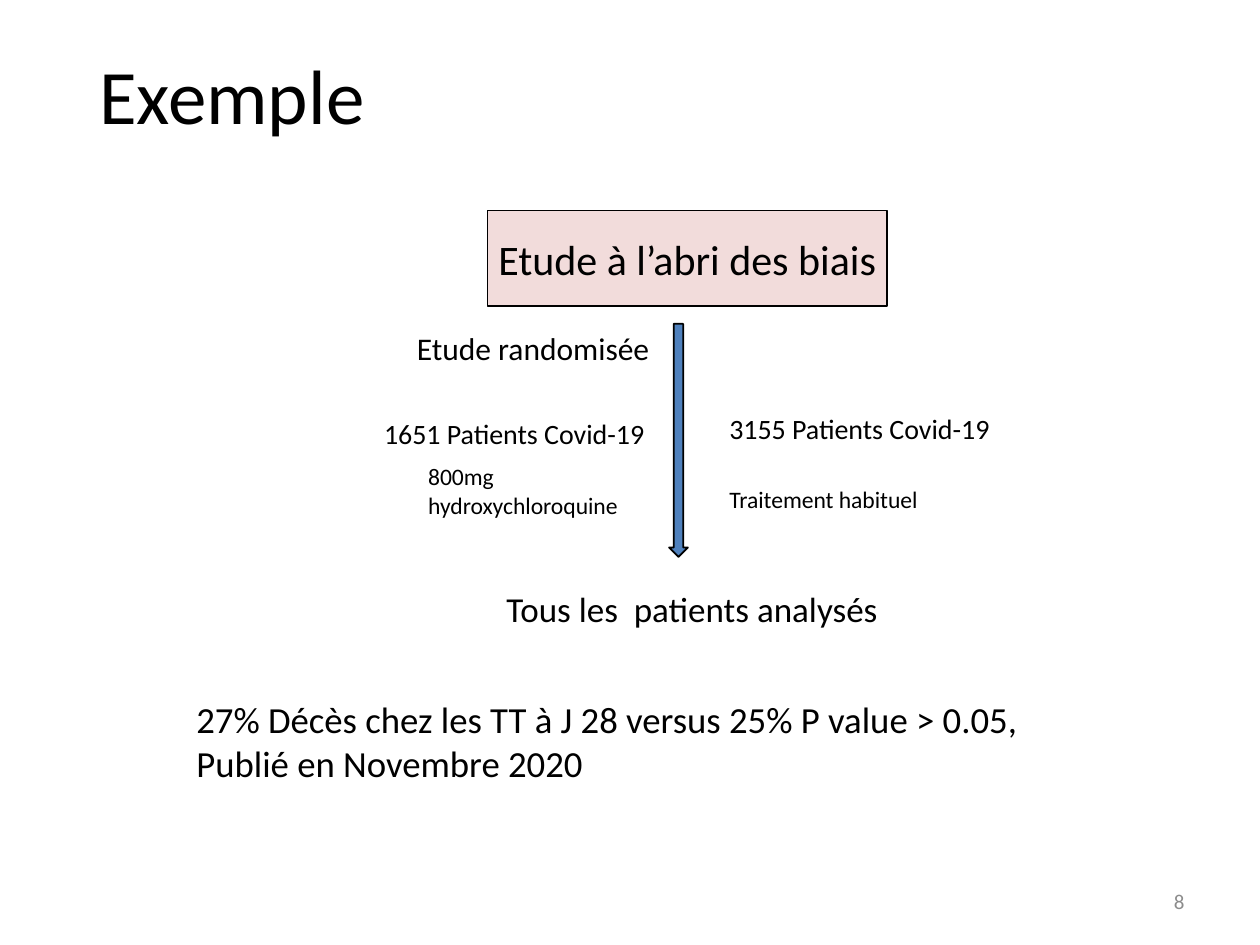
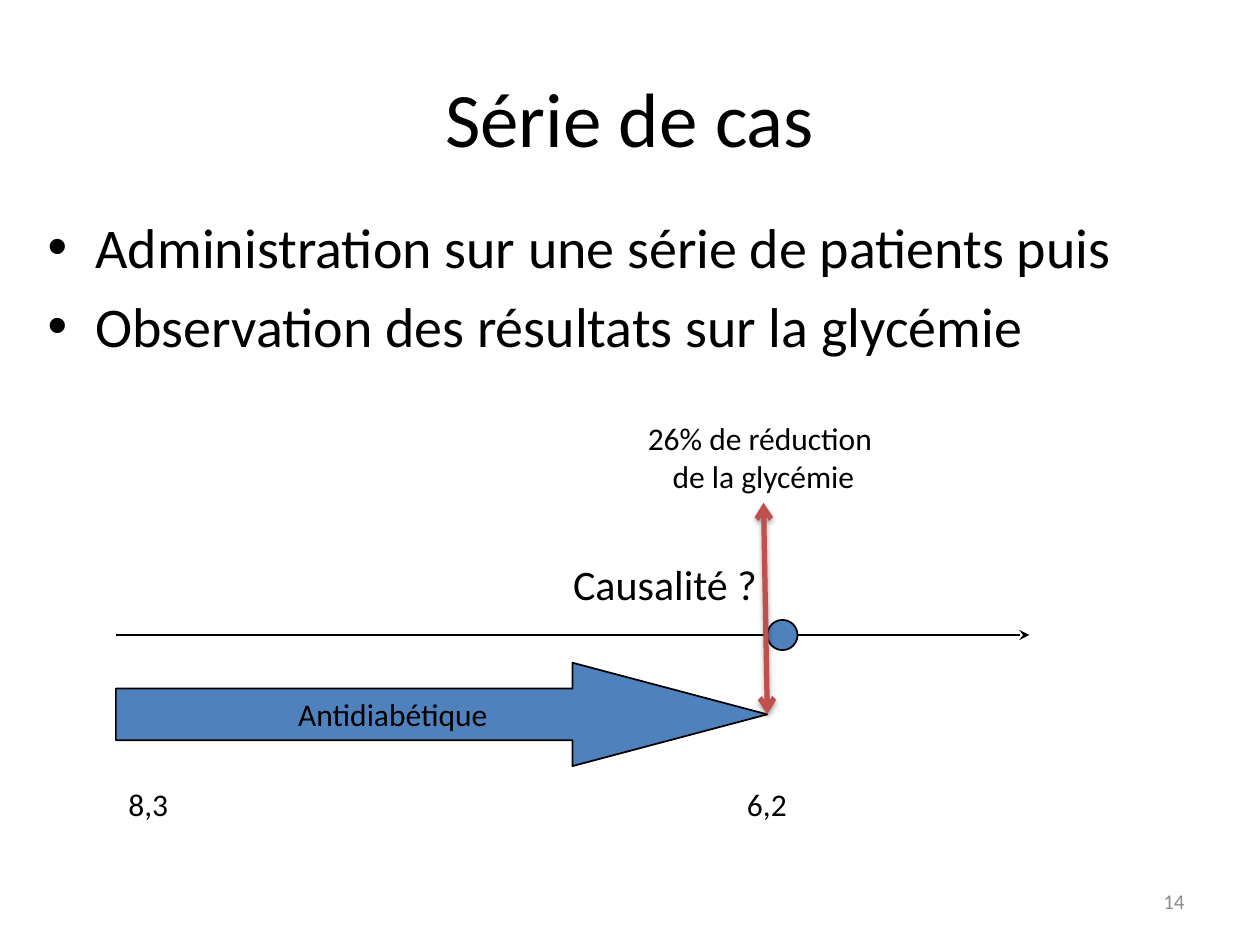
import pptx
import pptx.dml.color
import pptx.enum.shapes
import pptx.enum.text
import pptx.oxml
import pptx.oxml.ns
import pptx.util

Inches = pptx.util.Inches
Pt = pptx.util.Pt
Shape = pptx.enum.shapes.MSO_SHAPE
Align = pptx.enum.text.PP_ALIGN
Anchor = pptx.enum.text.MSO_ANCHOR

FONT = "Calibri"
BLACK = "000000"
GREY = "8C8C8C"
BLUE = "4F81BD"
PINK = "F2DCDB"
RED = "C0504D"
TITLE_SIZE = 44
BULLET_INDENT = 0.38


def color(hex_string):
    return pptx.dml.color.RGBColor.from_string(hex_string)


def append_xml(parent, xml):
    namespace = pptx.oxml.ns.nsdecls("a")
    element = pptx.oxml.parse_xml(f"<a:root {namespace}>{xml}</a:root>")
    for child in list(element):
        parent.append(child)


def write(shape, lines, size, align=Align.LEFT, anchor=Anchor.TOP, wrap=True, ink=BLACK):
    frame = shape.text_frame
    frame.word_wrap = wrap
    frame.vertical_anchor = anchor
    for index, line in enumerate(lines):
        paragraph = frame.paragraphs[0] if index == 0 else frame.add_paragraph()
        paragraph.text = line
        paragraph.alignment = align
        paragraph.font.name = FONT
        paragraph.font.size = Pt(size)
        paragraph.font.color.rgb = color(ink)
    return frame


def add_text(slide, box, lines, size, **style):
    shape = slide.shapes.add_textbox(*map(Inches, box))
    return write(shape, lines, size, **style)


def add_label(slide, box, *lines, size=18):
    add_text(slide, box, lines, size, wrap=False)


def add_title(slide, box, text, align=Align.LEFT):
    add_text(slide, box, [text], TITLE_SIZE, align=align, anchor=Anchor.MIDDLE)


def add_page_number(slide, number):
    add_text(slide, (7.17, 6.95, 2.33, 0.4), [str(number)], 12,
             align=Align.RIGHT, anchor=Anchor.MIDDLE, ink=GREY)


def add_bullets(slide, box, lines, size):
    frame = add_text(slide, box, lines, size)
    indent = Inches(BULLET_INDENT)
    for paragraph in frame.paragraphs:
        paragraph.space_before = Pt(size * 0.2)
        properties = paragraph._p.get_or_add_pPr()
        properties.set("marL", str(indent))
        properties.set("indent", str(-indent))
        append_xml(properties, '<a:buFont typeface="Arial"/><a:buChar char="•"/>')


def add_block(slide, kind, box, fill, text=None, size=18):
    shape = slide.shapes.add_shape(kind, *map(Inches, box))
    shape.shadow.inherit = False
    shape.fill.solid()
    shape.fill.fore_color.rgb = color(fill)
    shape.line.color.rgb = color(BLACK)
    shape.line.width = Pt(1)
    if text:
        write(shape, [text], size, align=Align.CENTER, anchor=Anchor.MIDDLE, wrap=False)
    return shape


def add_line(slide, start, end, ink, width, head="none", tail="none", effect=""):
    connector = slide.shapes.add_connector(
        pptx.enum.shapes.MSO_CONNECTOR.STRAIGHT, *map(Inches, start + end))
    connector.line.color.rgb = color(ink)
    connector.line.width = Pt(width)
    append_xml(connector.line._get_or_add_ln(),
               f'<a:headEnd type="{head}"/><a:tailEnd type="{tail}"/>')
    append_xml(connector._element.spPr, f"<a:effectLst>{effect}</a:effectLst>")


def soft_shadow(blur, distance, degrees, opacity):
    return (f'<a:outerShdw blurRad="{Pt(blur)}" dist="{Pt(distance)}" '
            f'dir="{degrees * 60000}" rotWithShape="0"><a:srgbClr val="{BLACK}">'
            f'<a:alpha val="{opacity * 1000}"/></a:srgbClr></a:outerShdw>')


def build_trial(slide):
    add_title(slide, (0.69, 0.2, 8.62, 1.09), "Exemple")
    add_block(slide, Shape.RECTANGLE, (3.87, 1.67, 3.17, 0.76), PINK,
              "Etude à l’abri des biais", 24)
    add_block(slide, Shape.DOWN_ARROW, (5.31, 2.57, 0.15, 1.85), BLUE)
    add_label(slide, (3.21, 2.56, 2.07, 0.4), "Etude randomisée")
    add_label(slide, (2.95, 3.26, 2.3, 0.37), "1651 Patients Covid-19", size=16)
    add_label(slide, (3.3, 3.62, 1.73, 0.56), "800mg", "hydroxychloroquine", size=13.5)
    add_label(slide, (5.69, 3.22, 2.3, 0.37), "3155 Patients Covid-19", size=16)
    add_label(slide, (5.69, 3.8, 1.72, 0.33), "Traitement habituel", size=13.5)
    add_label(slide, (3.92, 4.61, 3.25, 0.44), "Tous les  patients analysés", size=20)
    add_text(slide, (1.46, 5.48, 7.09, 0.81),
             ["27% Décès chez les TT à J 28 versus 25% P value > 0.05, "
              "Publié en Novembre 2020"], 21)
    add_page_number(slide, 8)


def build_case_series(slide):
    start_x, end_x, axis_y, dot = 0.92, 6.09, 5.04, 0.24
    add_title(slide, (0.5, 0.3, 9, 1.25), "Série de cas", Align.CENTER)
    add_bullets(slide, (0.28, 1.64, 9.33, 2.5),
                ["Administration sur une série de patients puis",
                 "Observation des résultats sur la glycémie"], 32)
    add_line(slide, (start_x, axis_y), (8.17, axis_y), BLACK, 1, tail="stealth")
    treatment = add_block(slide, Shape.RIGHT_ARROW,
                          (start_x, 5.26, end_x - start_x, 0.82), BLUE, "Antidiabétique")
    treatment.adjustments[1] = 1.885
    add_block(slide, Shape.OVAL, (end_x, axis_y - dot / 2, dot, dot), BLUE)
    add_text(slide, (4.06, 3.28, 4, 0.71), ["26% de réduction \nde la glycémie"], 18,
             align=Align.CENTER)
    add_line(slide, (end_x, 5.67), (6.06, 3.99), RED, 3, head="arrow", tail="arrow",
             effect=soft_shadow(3.1, 1.8, 90, 35))
    add_label(slide, (4.45, 4.38, 1.67, 0.5), "Causalité ?", size=24)
    for left, glycemia in ((start_x, "8,3"), (5.83, "6,2")):
        add_label(slide, (left, 6.18, 0.52, 0.4), glycemia)
    add_page_number(slide, 14)


def main():
    presentation = pptx.Presentation()
    presentation.slide_width = Inches(10)
    presentation.slide_height = Inches(7.5)
    blank = presentation.slide_layouts[6]
    for build in (build_trial, build_case_series):
        build(presentation.slides.add_slide(blank))
    presentation.save("out.pptx")


if __name__ == "__main__":
    main()
